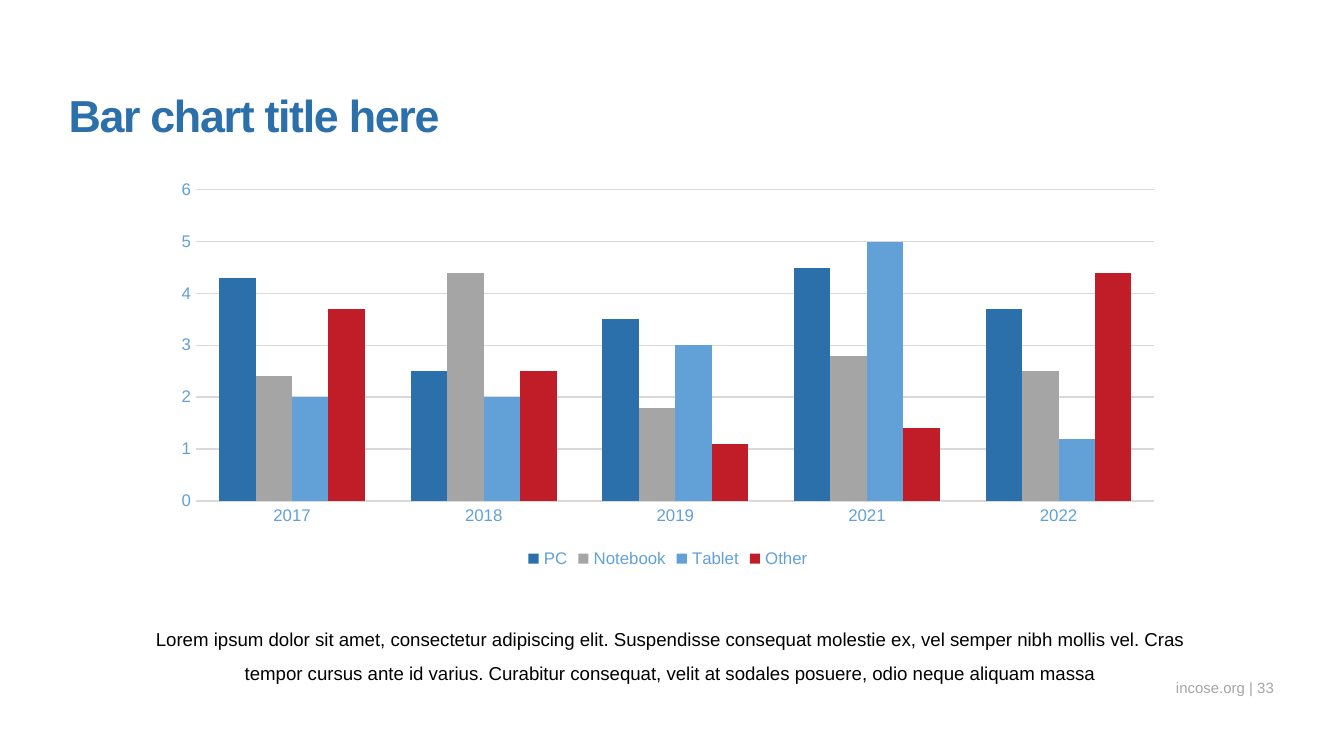
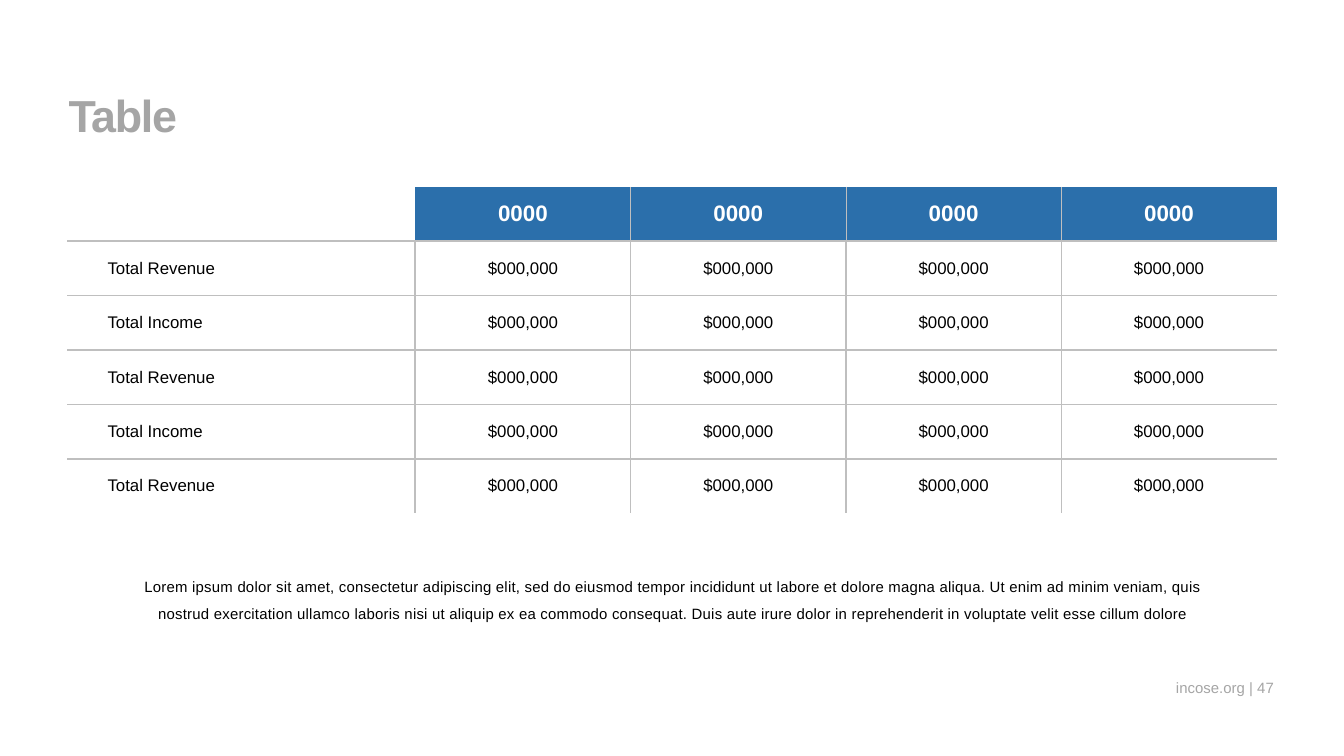
import pptx
import pptx.chart.data
import pptx.dml.color
import pptx.enum.chart
import pptx.enum.text
import pptx.oxml
import pptx.oxml.ns
import pptx.util

BLUE, SKY, GREY, RED = "2B6FAB", "61A1D7", "A5A5A5", "C01D28"
BLACK, WHITE, RULE, GRID_LINE = "000000", "FFFFFF", "BFBFBF", "D9D9D9"
FONT = "Arial"
COLUMNS, ROWS = 100, 56.25
ALIGN = pptx.enum.text.PP_ALIGN
ANCHOR = pptx.enum.text.MSO_ANCHOR


def rgb(value):
    return pptx.dml.color.RGBColor.from_string(value)


def set_font(font, size, color, bold=False):
    font.name = FONT
    font.size = pptx.util.Pt(size)
    font.bold = bold
    font.color.rgb = rgb(color)


def set_margins(holder, margins):
    """Apply left, top, right, bottom insets to a text frame or cell."""
    for side, margin in zip(("left", "top", "right", "bottom"), margins):
        setattr(holder, "margin_" + side, pptx.util.Inches(margin))


def set_line(line, color):
    line.color.rgb = rgb(color)
    line.width = pptx.util.Pt(0.75)


def set_border(cell, side, width):
    """Draw one cell edge (L, R, T or B); a width of 0 hides it."""
    paint = f'<a:solidFill><a:srgbClr val="{RULE}"/></a:solidFill>' if width else "<a:noFill/>"
    cell._tc.get_or_add_tcPr().append(pptx.oxml.parse_xml(
        f'<a:ln{side} {pptx.oxml.ns.nsdecls("a")} w="{int(width * 12700)}">{paint}</a:ln{side}>'))


class Deck:
    def __init__(self):
        self.file = pptx.Presentation()
        self.file.slide_width = pptx.util.Inches(10)
        self.file.slide_height = pptx.util.Inches(5.625)
        self.slide = None

    def place(self, left, top, width, height):
        """Turn grid columns and rows into slide lengths."""
        column = self.file.slide_width / COLUMNS
        row = self.file.slide_height / ROWS
        return [pptx.util.Emu(round(n)) for n in
                (left * column, top * row, width * column, height * row)]

    def add_slide(self, title, title_color, number):
        self.slide = self.file.slides.add_slide(self.file.slide_layouts[6])
        self.add_text(f"incose.org | {number}", (83.8, 49.9, 11.3, 1.9), 8, GREY,
                      align=ALIGN.RIGHT, line_spacing=1.5, anchor=ANCHOR.BOTTOM,
                      margins=(0, 0, 0.03, 0))
        self.add_text(title, (5.1, 6.5, 89.9, 4), 24, title_color, bold=True, tracking=-0.7)

    def add_text(self, text, box, size, color, bold=False, align=ALIGN.LEFT, line_spacing=1,
                 space_after=0, tracking=0, anchor=ANCHOR.TOP, margins=(0, 0, 0, 0)):
        frame = self.slide.shapes.add_textbox(*self.place(*box)).text_frame
        frame.word_wrap = True
        frame.vertical_anchor = anchor
        set_margins(frame, margins)
        frame.text = text
        paragraph = frame.paragraphs[0]
        paragraph.alignment = align
        paragraph.line_spacing = line_spacing
        paragraph.space_after = pptx.util.Pt(space_after)
        run = paragraph.runs[0]
        set_font(run.font, size, color, bold)
        if tracking:
            run._r.get_or_add_rPr().set("spc", str(round(tracking * 100)))

    def add_caption(self, text, box, size, **style):
        self.add_text(text, box, size, BLACK, align=ALIGN.CENTER,
                      line_spacing=1.5, space_after=3, **style)

    def add_column_chart(self, categories, series, box):
        """Draw clustered columns; series maps a name to its colour and values."""
        data = pptx.chart.data.CategoryChartData()
        data.categories = categories
        for name, (_, values) in series.items():
            data.add_series(name, values)
        chart = self.slide.shapes.add_chart(
            pptx.enum.chart.XL_CHART_TYPE.COLUMN_CLUSTERED, *self.place(*box), data).chart
        set_font(chart.font, 10, BLACK)
        chart.has_title = False
        chart.has_legend = True
        chart.legend.position = pptx.enum.chart.XL_LEGEND_POSITION.BOTTOM
        chart.legend.include_in_layout = False
        set_font(chart.legend.font, 9, SKY)

        plot = chart.plots[0]
        plot.gap_width = 126
        plot.overlap = 0
        plot.vary_by_categories = False
        for columns, (color, _) in zip(plot.series, series.values()):
            columns.format.fill.solid()
            columns.format.fill.fore_color.rgb = rgb(color)

        years, amounts = chart.category_axis, chart.value_axis
        for axis in (years, amounts):
            axis.major_tick_mark = pptx.enum.chart.XL_TICK_MARK.NONE
            axis.minor_tick_mark = pptx.enum.chart.XL_TICK_MARK.NONE
            set_font(axis.tick_labels.font, 9, SKY)
        set_line(years.format.line, GRID_LINE)
        amounts.format.line.fill.background()
        amounts.has_major_gridlines = True
        set_line(amounts.major_gridlines.format.line, GRID_LINE)
        amounts.minimum_scale, amounts.maximum_scale, amounts.major_unit = 0, 6, 1

    def add_table(self, records, box, label_width):
        """Draw a table with a header row and a wider first column of labels."""
        last_row, last_column = len(records) - 1, len(records[0]) - 1
        table = self.slide.shapes.add_table(
            last_row + 1, last_column + 1, *self.place(*box)).table
        table.first_row = table.horz_banding = False
        value_width = (box[2] - label_width) / last_column
        for index, column in enumerate(table.columns):
            column.width = self.place(0, 0, value_width if index else label_width, 0)[2]
        for r, record in enumerate(records):
            for c, text in enumerate(record):
                cell = table.cell(r, c)
                upright = 1 if r else 0.5
                set_border(cell, "L", upright if c > 1 or (r and c) else 0)
                set_border(cell, "R", upright if c < last_column and (r or c) else 0)
                set_border(cell, "T", 1 if r else 0)
                set_border(cell, "B", 1 if r < last_row else 0)
                self.fill_cell(cell, text, header=r == 0, label=c == 0)

    def fill_cell(self, cell, text, header, label):
        cell.vertical_anchor = ANCHOR.MIDDLE
        inset = 0.04 if header else 0
        set_margins(cell, (0.3 if label else 0.1, inset, 0.1, inset))
        if header and not label:
            cell.fill.solid()
            cell.fill.fore_color.rgb = rgb(BLUE)
        else:
            cell.fill.background()
        cell.text_frame.text = text
        paragraph = cell.text_frame.paragraphs[0]
        paragraph.alignment = ALIGN.LEFT if label else ALIGN.CENTER
        for run in paragraph.runs:
            set_font(run.font, 12 if header else 9, WHITE if header else BLACK, header)


def build_device_chart(deck):
    deck.add_slide("Bar chart title here", BLUE, 33)
    deck.add_caption(
        "Lorem ipsum dolor sit amet, consectetur adipiscing elit. Suspendisse consequat "
        "molestie ex, vel semper nibh mollis vel. Cras tempor cursus ante id varius. "
        "Curabitur consequat, velit at sodales posuere, odio neque aliquam massa",
        (10.9, 45.4, 78.8, 5.7), 10, margins=(0, 0.05, 0.1, 0.05))
    devices = {
        "PC": (BLUE, (4.3, 2.5, 3.5, 4.5, 3.7)),
        "Notebook": (GREY, (2.4, 4.4, 1.8, 2.8, 2.5)),
        "Tablet": (SKY, (2, 2, 3, 5, 1.2)),
        "Other": (RED, (3.7, 2.5, 1.1, 1.4, 4.4)),
    }
    deck.add_column_chart(("2017", "2018", "2019", "2021", "2022"), devices,
                          (12, 12.8, 75.4, 29.9))


def build_revenue_table(deck):
    deck.add_slide("Table", GREY, 47)
    labels = ("Total Revenue", "Total Income", "Total Revenue", "Total Income", "Total Revenue")
    records = [["", *["0000"] * 4]] + [[label, *["$000,000"] * 4] for label in labels]
    deck.add_table(records, (5, 13.9, 90, 24.3), label_width=25.9)
    deck.add_caption(
        "Lorem ipsum dolor sit amet, consectetur adipiscing elit, sed do eiusmod tempor "
        "incididunt ut labore et dolore magna aliqua. Ut enim ad minim veniam, quis nostrud "
        "exercitation ullamco laboris nisi ut aliquip ex ea commodo consequat. Duis aute irure "
        "dolor in reprehenderit in voluptate velit esse cillum dolore",
        (8.8, 42.3, 82.7, 3.8), 8, tracking=0.1)


def main():
    deck = Deck()
    build_device_chart(deck)
    build_revenue_table(deck)
    deck.file.save("out.pptx")


if __name__ == "__main__":
    main()
